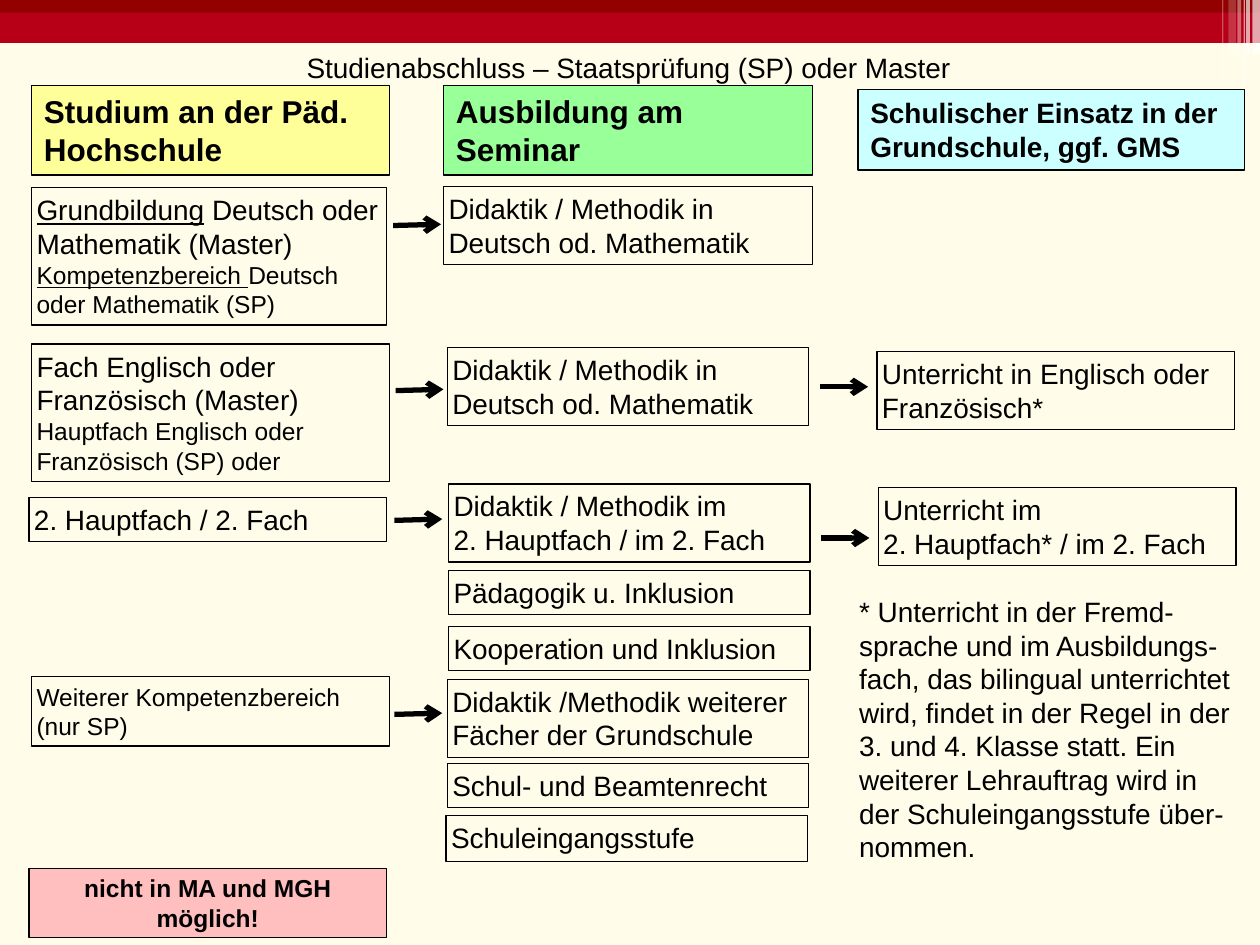
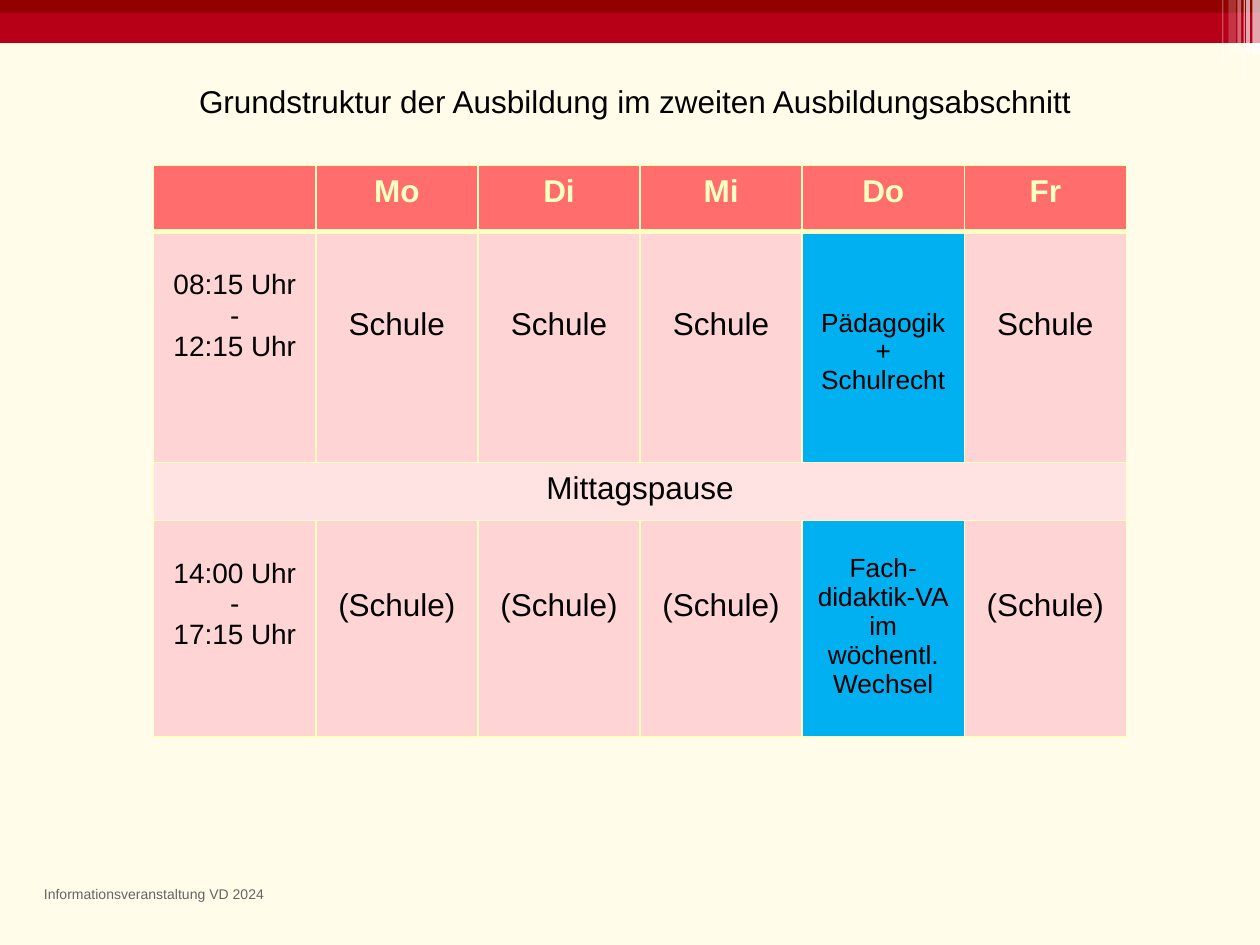
from dataclasses import dataclass
from lxml import etree
from pptx import Presentation
from pptx import util as u
from pptx.dml.color import RGBColor
from pptx.enum import shapes, text
from pptx.oxml import ns


@dataclass(frozen=True)
class Theme:
    font: str = "Arial"
    background: str = "FFFDE9"
    band: str = "B70017"
    band_dark: str = "920000"
    white: str = "FFFFFF"
    ink: str = "000000"
    footer: str = "646464"
    study: str = "FFFF99"
    seminar: str = "99FF99"
    school: str = "CCFFFF"
    warning: str = "FFBFBF"
    table_head: str = "FF6D6D"
    table_cell: str = "FFD4D4"
    table_break: str = "FFE2E2"
    table_event: str = "00B0F0"
    table_line: str = "FFFFC1"
    heading_size: int = 18
    body_size: int = 16
    event_size: int = 15
    small_size: int = 14
    footer_size: int = 8
    leading: float = 1.2
    table_leading: float = 1.1


theme = Theme()
LEFT, CENTER = text.PP_ALIGN.LEFT, text.PP_ALIGN.CENTER
presentation = Presentation()
presentation.slide_width = u.Inches(10)
presentation.slide_height = u.Inches(7.5)
column = presentation.slide_width / 100
row = presentation.slide_height / 75


def write(frame, content, size=theme.body_size, later_size=None, color=theme.ink, bold=False,
          align=LEFT, leading=theme.leading, underlined=()):
    frame.word_wrap = True
    for number, line in enumerate(content.split("\n")):
        paragraph = frame.paragraphs[0] if number == 0 else frame.add_paragraph()
        points = later_size if number and later_size else size
        paragraph.alignment = align
        paragraph.line_spacing = u.Pt(round(points * leading, 1))
        start = next((len(word) for word in underlined if line.startswith(word)), 0)
        for part, underline in ((line[:start], True), (line[start:], False)):
            if part:
                run = paragraph.add_run()
                run.text = part
                font = run.font
                font.name, font.size = theme.font, u.Pt(points)
                font.bold, font.underline = bold, underline
                font.color.rgb = RGBColor.from_string(color)


def add_box(slide, left, top, width, height, fill=None, line=None, inset=None, alpha=None):
    shape = slide.shapes.add_shape(shapes.MSO_SHAPE.RECTANGLE, u.Emu(int(left * column)),
                                   u.Emu(int(top * row)), u.Emu(int(width * column)),
                                   u.Emu(int(height * row)))
    shape.shadow.inherit = False
    shape.fill.background()
    shape.line.fill.background()
    if fill:
        shape.fill.solid()
        shape.fill.fore_color.rgb = RGBColor.from_string(fill)
    if alpha:
        color = shape.fill.fore_color._xFill.find(ns.qn("a:srgbClr"))
        etree.SubElement(color, ns.qn("a:alpha"), val=str(alpha * 1000))
    if line:
        shape.line.color.rgb = RGBColor.from_string(line)
        shape.line.width = u.Pt(0.75)
    frame = shape.text_frame
    frame.vertical_anchor = text.MSO_ANCHOR.TOP
    if inset:
        frame.margin_left = frame.margin_right = u.Emu(int(inset * column))
        frame.margin_top = frame.margin_bottom = u.Emu(int(inset * row))
    return shape


stripes = [
    (98.9, 0.3, 4.3, 65), (99.4, 0.6, 4.3, 65), (97, 0.1, 6.4, 30),
    (98.7, 0.1, 6.8, 60), (97.5, 0.6, 4.3, 20), (98.2, 0.3, 4.3, 40),
]
slides = [presentation.slides.add_slide(presentation.slide_layouts[6]) for _ in range(2)]
for slide in slides:
    slide.background.fill.solid()
    slide.background.fill.fore_color.rgb = RGBColor.from_string(theme.background)
    add_box(slide, 0, 0, 100, 3.4, fill=theme.band)
    add_box(slide, 0, 0, 100, 1, fill=theme.band_dark)
    for left, width, height, alpha in stripes:
        add_box(slide, left, 0, width, height, fill=theme.white, alpha=alpha)
paths, week = slides

headings = [
    (2.5, 6.8, 28.4, 7.1, theme.study, theme.heading_size, "Studium an der Päd. Hochschule"),
    (35.2, 6.8, 29.3, 7.1, theme.seminar, theme.heading_size, "Ausbildung am Seminar"),
    (68.1, 7.1, 30.7, 6.4, theme.school, theme.body_size,
     "Schulischer Einsatz in der Grundschule, ggf. GMS"),
]
for left, top, width, height, fill, size, label in headings:
    shape = add_box(paths, left, top, width, height, fill=fill, line=theme.ink)
    write(shape.text_frame, label, size=size, bold=True)

title = add_box(paths, 2.6, 3.6, 94.6, 3.5, inset=0.4)
write(title.text_frame, "Studienabschluss – Staatsprüfung (SP) oder Master", align=CENTER)

one_line, two_lines, four_lines = 3.5, 6.2, 10.9
small = {"size": theme.small_size}
small_below = {"later_size": theme.small_size}
didactics = "Didaktik / Methodik in Deutsch od. Mathematik"
steps = [
    (2.5, 14.9, 28.2, four_lines, "Grundbildung Deutsch oder Mathematik (Master)\n"
     "Kompetenzbereich Deutsch oder Mathematik (SP)",
     {**small_below, "underlined": ("Grundbildung", "Kompetenzbereich ")}),
    (2.5, 27.3, 28.4, four_lines, "Fach Englisch oder Französisch (Master)\n"
     "Hauptfach Englisch oder Französisch (SP) oder", small_below),
    (2.3, 39.5, 28.4, one_line, "2. Hauptfach / 2. Fach", {}),
    (2.5, 53.7, 28.4, 5.5, "Weiterer Kompetenzbereich (nur SP)", small),
    (35.2, 14.8, 29.3, two_lines, didactics, {}),
    (35.5, 27.6, 28.7, two_lines, didactics, {}),
    (35.6, 38.4, 28.7, two_lines, "Didaktik / Methodik im\n2. Hauptfach / im 2. Fach", {}),
    (35.6, 45.3, 28.7, one_line, "Pädagogik u. Inklusion", {}),
    (35.6, 49.7, 28.7, one_line, "Kooperation und Inklusion", {}),
    (35.5, 53.9, 28.7, two_lines, "Didaktik /Methodik weiterer Fächer der Grundschule", {}),
    (35.5, 60.6, 28.7, one_line, "Schul- und Beamtenrecht", {}),
    (35.4, 64.7, 28.7, 3.7, "Schuleingangsstufe", {}),
    (69.6, 27.9, 28.4, two_lines, "Unterricht in Englisch oder Französisch*", {}),
    (69.7, 38.7, 28.4, two_lines, "Unterricht im\n2. Hauptfach* / im 2. Fach", {}),
]
for left, top, width, height, label, style in steps:
    shape = add_box(paths, left, top, width, height, line=theme.ink, inset=0.4)
    write(shape.text_frame, label, **style)

warning = add_box(paths, 2.3, 68.9, 28.4, 5.5, fill=theme.warning, line=theme.ink, inset=0.4)
write(warning.text_frame, "nicht in MA und MGH möglich!", size=theme.small_size, bold=True,
      align=CENTER)
remark = add_box(paths, 67.2, 46.7, 31.7, 22.6)
write(remark.text_frame, "* Unterricht in der Fremd-sprache und im Ausbildungs-fach, das bilingual "
      "unterrichtet wird, findet in der Regel in der 3. und 4. Klasse statt. Ein weiterer "
      "Lehrauftrag wird in der Schuleingangsstufe über-nommen.")

arrows = [(31.2, 17.9, 0.1), (31.4, 31, 0.1), (31.3, 41.3, 0.1), (31.3, 56.7, 0.1),
          (65.1, 30.7, 0), (65.2, 42.7, 0)]
for left, top, rise in arrows:
    arrow = paths.shapes.add_connector(
        shapes.MSO_CONNECTOR.STRAIGHT, u.Emu(int(left * column)), u.Emu(int(top * row)),
        u.Emu(int((left + 3.8) * column)), u.Emu(int((top - rise) * row)))
    arrow.line.color.rgb = RGBColor.from_string(theme.ink)
    arrow.line.width = u.Pt(3)
    etree.SubElement(arrow.line._get_or_add_ln(), ns.qn("a:tailEnd"), type="arrow")
    etree.SubElement(arrow._element.spPr, ns.qn("a:effectLst"))

row_heights = [5.3, 18.3, 4.6, 17.2]
days = ["", "Mo", "Di", "Mi", "Do", "Fr"]
event_day = days.index("Do")
morning = ["08:15 Uhr\n-\n12:15 Uhr", *["Schule"] * 3, "Pädagogik\n+\nSchulrecht", "Schule"]
afternoon = ["14:00 Uhr\n-\n17:15 Uhr", *["(Schule)"] * 3,
             "Fach-\ndidaktik-VA\nim wöchentl. Wechsel", "(Schule)"]
timetable = [days, morning, ["Mittagspause"] + [""] * 5, afternoon]
row_fills = [theme.table_head, theme.table_cell, theme.table_break, theme.table_cell]
text_tops = {1: (3, 6, 6.1), 3: (3, 5.4, 2.7)}

table = week.shapes.add_table(4, 6, u.Emu(int(12.2 * column)), u.Emu(int(13.1 * row)),
                              u.Emu(int(77.2 * column)),
                              u.Emu(int(sum(row_heights) * row))).table
for table_column in table.columns:
    table_column.width = u.Emu(int(77.2 / 6 * column))
for r, (height, labels) in enumerate(zip(row_heights, timetable)):
    table.rows[r].height = u.Emu(int(height * row))
    for c, label in enumerate(labels):
        cell = table.cell(r, c)
        is_event = r in text_tops and c == event_day
        cell.fill.solid()
        cell.fill.fore_color.rgb = RGBColor.from_string(
            theme.table_event if is_event else row_fills[r])
        size, leading = theme.heading_size, theme.leading
        if r in text_tops:
            leading = theme.table_leading
            kind = 0 if c == 0 else 2 if is_event else 1
            size = (theme.body_size, theme.heading_size, theme.event_size)[kind]
            cell.margin_top = u.Emu(int(text_tops[r][kind] * row))
        if label:
            write(cell.text_frame, label, size=size, bold=r == 0, align=CENTER, leading=leading,
                  color=theme.table_line if r == 0 else theme.ink)
        properties = cell._tc.get_or_add_tcPr()
        for position, side in enumerate(("lnL", "lnR", "lnT", "lnB")):
            is_thick = (r, side) in ((0, "lnB"), (1, "lnT"))
            border = etree.Element(ns.qn("a:" + side), w=str(u.Pt(3 if is_thick else 1)))
            border_fill = etree.SubElement(border, ns.qn("a:solidFill"))
            etree.SubElement(border_fill, ns.qn("a:srgbClr"), val=theme.table_line)
            properties.insert(position, border)
table.cell(2, 0).merge(table.cell(2, 5))

title = add_box(week, 12.2, 6, 76.4, 4)
write(title.text_frame, "Grundstruktur der Ausbildung im zweiten Ausbildungsabschnitt",
      size=theme.heading_size, align=CENTER)
footer = add_box(week, 2.5, 69.8, 19.9, 2.4)
write(footer.text_frame, "Informationsveranstaltung VD 2024", size=theme.footer_size,
      color=theme.footer)

presentation.save("out.pptx")
